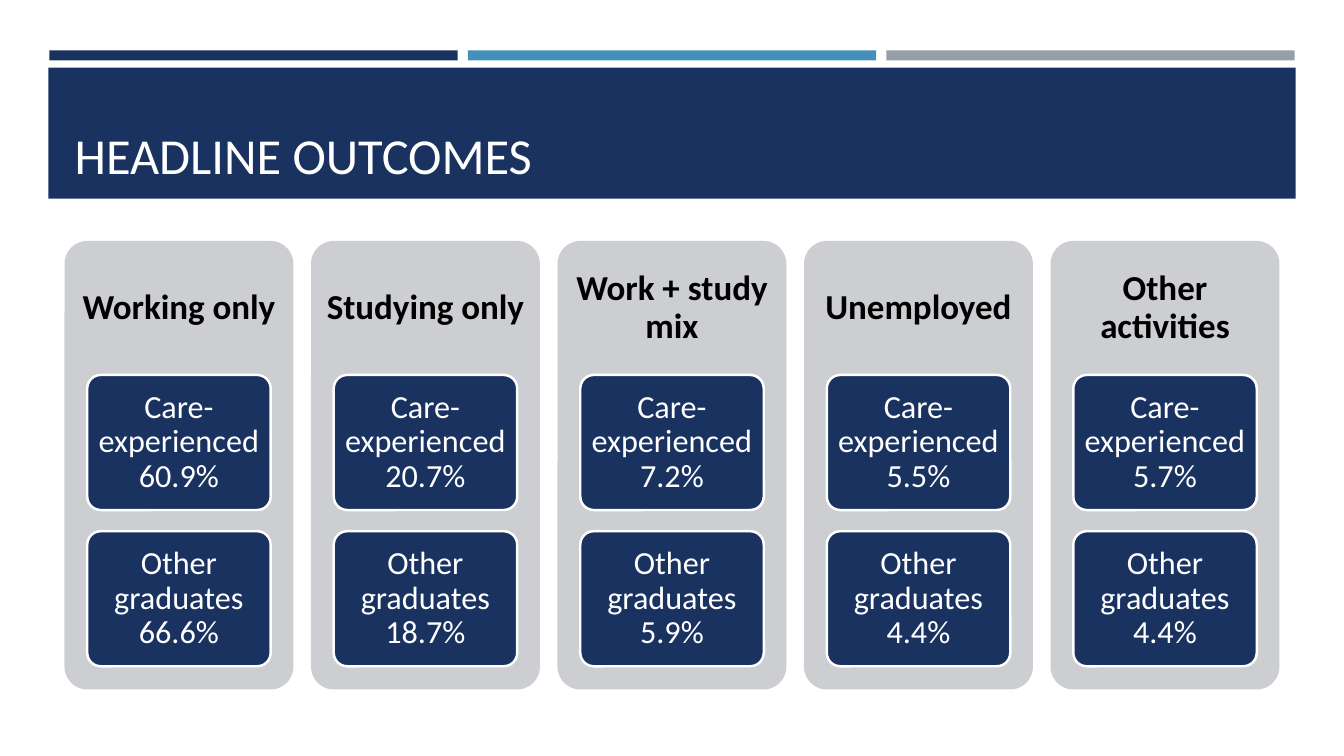
import pptx
import pptx.util
import pptx.dml.color
import pptx.enum.shapes
import pptx.enum.text

Inches, Pt = pptx.util.Inches, pptx.util.Pt
PRESET = pptx.enum.shapes.MSO_SHAPE
ANCHOR = pptx.enum.text.MSO_ANCHOR
ALIGN = pptx.enum.text.PP_ALIGN

# Content
TITLE = "HEADLINE OUTCOMES"
GROUPS = ["Care-experienced", "Other graduates"]
OUTCOMES = [
    ("Working only", ["60.9%", "66.6%"]),
    ("Studying only", ["20.7%", "18.7%"]),
    ("Work + study mix", ["7.2%", "5.9%"]),
    ("Unemployed", ["5.5%", "4.4%"]),
    ("Other activities", ["5.7%", "4.4%"]),
]
COLORS = {"navy": "1A3260", "blue": "4590B8", "gray": "969FA7",
          "panel": "CDCED2", "white": "FFFFFF", "black": "000000"}
FONT = "Calibri"

# Layout, in inches
STRIP_LEFT, STRIP_PITCH = 0.49, 4.15
PANEL_LEFT, PANEL_TOP, PANEL_WIDTH, PANEL_HEIGHT = 0.64, 2.39, 2.27, 4.45
PANEL_PITCH = 2.445
CARD_TOP, CARD_WIDTH, CARD_HEIGHT, CARD_PITCH = 3.72, 1.82, 1.34, 1.55
CARD_INDENT = (PANEL_WIDTH - CARD_WIDTH) / 2


def color(name):
    return pptx.dml.color.RGBColor.from_string(COLORS[name])


def add_block(slide, preset, box, fill):
    block = slide.shapes.add_shape(preset, *map(Inches, box))
    block.shadow.inherit = False
    block.fill.solid()
    block.fill.fore_color.rgb = color(fill)
    block.line.fill.background()
    return block


def add_rounded(slide, box, fill):
    block = add_block(slide, PRESET.ROUNDED_RECTANGLE, box, fill)
    block.adjustments[0] = 0.1
    return block


def write(holder, text, size, ink, insets, align, anchor, bold=False, spacing=1.0):
    frame = holder.text_frame
    frame.word_wrap = True
    frame.vertical_anchor = anchor
    (frame.margin_left, frame.margin_top,
     frame.margin_right, frame.margin_bottom) = map(Inches, insets)
    paragraph = frame.paragraphs[0]
    paragraph.alignment = align
    paragraph.line_spacing = spacing
    run = paragraph.add_run()
    run.text = text
    run.font.name, run.font.size, run.font.bold = FONT, Pt(size), bold
    run.font.color.rgb = color(ink)


def main():
    deck = pptx.Presentation()
    deck.slide_width, deck.slide_height = Inches(13.33), Inches(7.5)
    slide = deck.slides.add_slide(deck.slide_layouts[5])

    # Header strips and band
    for i, fill in enumerate(["navy", "blue", "gray"]):
        add_block(slide, PRESET.RECTANGLE,
                  (STRIP_LEFT + i * STRIP_PITCH, 0.5, 4.05, 0.1), fill)
    add_block(slide, PRESET.RECTANGLE, (0.48, 0.67, 12.37, 1.3), "navy")

    # Title, raised above the band
    title = slide.shapes.title
    title.left, title.top, title.width, title.height = map(
        Inches, (0.64, 0.77, 12.06, 1.11))
    write(title, TITLE, 36, "white", (0.1, 0.05, 0.1, 0.05),
          ALIGN.LEFT, ANCHOR.BOTTOM)
    slide.shapes.element.append(title.element)

    # One panel per outcome, one card per group
    for column, (outcome, shares) in enumerate(OUTCOMES):
        left = PANEL_LEFT + column * PANEL_PITCH
        panel = add_rounded(
            slide, (left, PANEL_TOP, PANEL_WIDTH, PANEL_HEIGHT), "panel")
        # The deep bottom inset keeps the heading above the cards
        write(panel, outcome, 25, "black", (0.03, 0.03, 0.03, 3.14),
              ALIGN.CENTER, ANCHOR.MIDDLE, bold=True, spacing=0.9)
        for row, (group, share) in enumerate(zip(GROUPS, shares)):
            card = add_rounded(
                slide, (left + CARD_INDENT, CARD_TOP + row * CARD_PITCH,
                        CARD_WIDTH, CARD_HEIGHT), "navy")
            card.line.color.rgb = color("white")
            card.line.width = Pt(1.75)
            write(card, f"{group} {share}", 23, "white",
                  (0.06, 0.05, 0.06, 0.05),
                  ALIGN.CENTER, ANCHOR.MIDDLE, spacing=0.9)

    deck.save("out.pptx")


if __name__ == "__main__":
    main()
